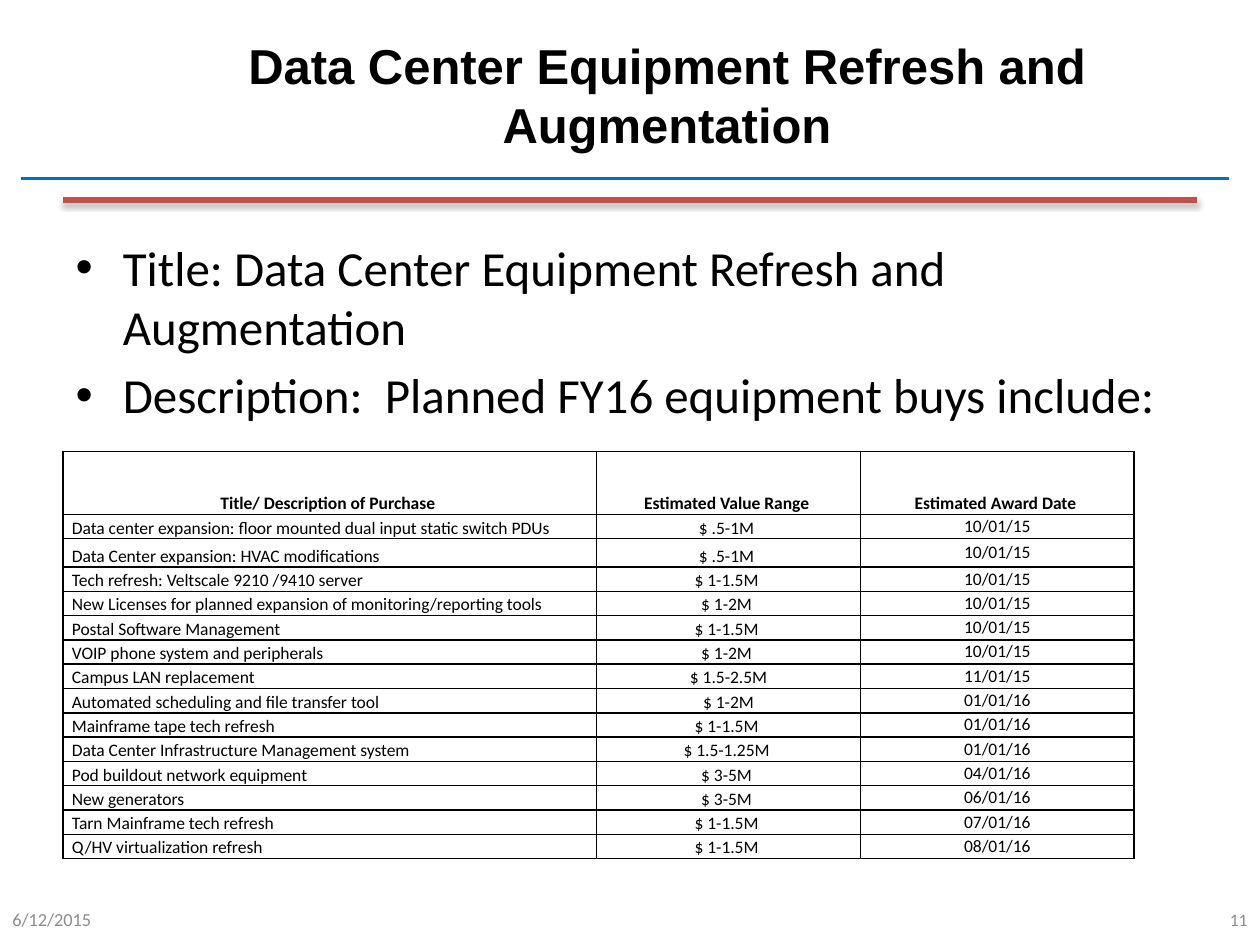
import dataclasses

import lxml.etree
import pptx
import pptx.dml.color
import pptx.enum.shapes
import pptx.enum.text
import pptx.oxml
import pptx.oxml.ns
import pptx.util

Cm = pptx.util.Cm
Pt = pptx.util.Pt
ALIGN = pptx.enum.text.PP_ALIGN
ANCHOR = pptx.enum.text.MSO_ANCHOR
qn = pptx.oxml.ns.qn


def rgb(value):
    return pptx.dml.color.RGBColor.from_string(value)


@dataclasses.dataclass
class Theme:
    ink: str = "000000"
    muted: str = "8C8C8C"
    blue: str = "0070C0"
    red: str = "C0504D"
    heading_font: str = "Arial"
    body_font: str = "Calibri"
    large: float = 28
    date: float = 10.5
    small: float = 10


class SlideBuilder:
    def __init__(self, prs, theme):
        self.theme = theme
        self.slide = prs.slides.add_slide(prs.slide_layouts[1])

    def add_text(self, p, text, align=ALIGN.LEFT, **formats):
        p.alignment = align
        r = p.add_run()
        r.text = text
        values = {"name": self.theme.body_font, "size": self.theme.small,
                  "color": self.theme.ink, "bold": False} | formats
        r.font.color.rgb = rgb(values.pop("color"))
        values["size"] = Pt(values["size"])
        for name, value in values.items():
            setattr(r.font, name, value)

    def frame(self, sp, box, anchor):
        for name, value in zip(("left", "top", "width", "height"), box):
            setattr(sp, name, Cm(value))
        tf = sp.text_frame
        tf.word_wrap = True
        tf.auto_size = pptx.enum.text.MSO_AUTO_SIZE.NONE
        tf.vertical_anchor = anchor
        return tf

    def title(self, text, box):
        tf = self.frame(self.slide.shapes.title, box, ANCHOR.MIDDLE)
        self.add_text(tf.paragraphs[0], text, ALIGN.CENTER, bold=True,
                      name=self.theme.heading_font, size=self.theme.large)

    def bullets(self, items, box):
        tf = self.frame(self.slide.placeholders[1], box, ANCHOR.TOP)
        for i, item in enumerate(items):
            p = tf.add_paragraph() if i else tf.paragraphs[0]
            p.space_before = Pt(0.2 * self.theme.large if i else 0)
            self.add_text(p, item, size=self.theme.large)

    def footer(self, text, box, align, size):
        sp = self.slide.shapes.add_textbox(0, 0, 0, 0)
        tf = self.frame(sp, box, ANCHOR.MIDDLE)
        self.add_text(tf.paragraphs[0], text, align,
                      size=size, color=self.theme.muted)

    def rule(self, x1, x2, y, color, width, shadow=False):
        sp = self.slide.shapes.add_connector(
            pptx.enum.shapes.MSO_CONNECTOR.STRAIGHT,
            Cm(x1), Cm(y), Cm(x2), Cm(y))
        sp.line.color.rgb = rgb(color)
        sp.line.width = Pt(width)
        effects = lxml.etree.SubElement(sp._element.spPr, qn("a:effectLst"))
        if shadow:
            outer = lxml.etree.SubElement(
                effects, qn("a:outerShdw"), blurRad=str(Pt(3.1)),
                dist=str(Pt(1.8)), dir="5400000", rotWithShape="0")
            tint = lxml.etree.SubElement(
                outer, qn("a:srgbClr"), val=self.theme.ink)
            lxml.etree.SubElement(tint, qn("a:alpha"), val="35000")

    def borders(self, cell):
        tc_pr = cell._tc.get_or_add_tcPr()
        for i, side in enumerate(("lnL", "lnR", "lnT", "lnB")):
            ln = pptx.oxml.parse_xml(
                f'<a:{side} {pptx.oxml.ns.nsdecls("a")} w="{Pt(1)}">'
                f'<a:solidFill><a:srgbClr val="{self.theme.ink}"/>'
                f'</a:solidFill></a:{side}>')
            tc_pr.insert(i, ln)

    def table(self, rows, left, top, widths, heights):
        table = self.slide.shapes.add_table(
            len(rows), len(widths), Cm(left), Cm(top),
            Cm(sum(widths)), Cm(sum(heights))).table
        table.first_row = table.horz_banding = False
        for column, width in zip(table.columns, widths):
            column.width = Cm(width)
        for i, (row, height) in enumerate(zip(rows, heights)):
            table.rows[i].height = Cm(height)
            for j, text in enumerate(row):
                cell = table.cell(i, j)
                cell.fill.background()
                cell.margin_left = cell.margin_right = Cm(0.18)
                cell.margin_top = cell.margin_bottom = 0
                cell.vertical_anchor = (
                    ANCHOR.MIDDLE if i and j == 2 else ANCHOR.BOTTOM)
                self.add_text(cell.text_frame.paragraphs[0], text,
                              ALIGN.LEFT if i and j == 0 else ALIGN.CENTER,
                              bold=i == 0)
                self.borders(cell)


HEADER = ("Title/ Description of Purchase ", "Estimated Value Range ",
          "Estimated Award Date ")
PURCHASES = [
    ("Data center expansion: floor mounted dual input static switch PDUs",
     "$ .5-1M ", "10/01/15"),
    ("Data Center expansion: HVAC modifications", "$ .5-1M ", "10/01/15"),
    ("Tech refresh: Veltscale 9210 /9410 server", "$ 1-1.5M ", "10/01/15"),
    ("New Licenses for planned expansion of monitoring/reporting tools",
     "$ 1-2M ", "10/01/15"),
    ("Postal Software Management", "$ 1-1.5M ", "10/01/15"),
    ("VOIP phone system and peripherals", "$ 1-2M ", "10/01/15"),
    ("Campus LAN replacement", "$ 1.5-2.5M", "11/01/15"),
    ("Automated scheduling and file transfer tool", "$ 1-2M", "01/01/16"),
    ("Mainframe tape tech refresh", "$ 1-1.5M ", "01/01/16"),
    ("Data Center Infrastructure Management system",
     "$ 1.5-1.25M ", "01/01/16"),
    ("Pod buildout network equipment", "$ 3-5M ", "04/01/16"),
    ("New generators", "$ 3-5M ", "06/01/16"),
    ("Tarn Mainframe tech refresh", "$ 1-1.5M ", "07/01/16"),
    ("Q/HV virtualization refresh", "$ 1-1.5M ", "08/01/16"),
]


def main():
    prs = pptx.Presentation()
    prs.slide_width, prs.slide_height = Cm(25.4), Cm(19.05)
    theme = Theme()
    s = SlideBuilder(prs, theme)

    # Title and the two rules below it
    s.title("Data Center Equipment Refresh and Augmentation",
            (3.39, 0.42, 20.11, 2.96))
    s.rule(0.42, 24.77, 3.6, theme.blue, 2)
    s.rule(1.27, 24.13, 4.03, theme.red, 3, shadow=True)

    # Introduction
    s.bullets(["Title: Data Center Equipment Refresh and Augmentation",
               "Description:  Planned FY16 equipment buys include:"],
              (1.27, 4.66, 23.5, 12.7))

    # Planned purchases
    heights = [1.27, 0.49, 0.57] + [0.49] * (len(PURCHASES) - 2)
    s.table([HEADER] + PURCHASES, 1.27, 9.1, (10.75, 5.33, 5.51), heights)

    # Date and page number
    s.footer("6/12/2015", (0, 18.03, 5.93, 1.01), ALIGN.LEFT, theme.date)
    s.footer("11", (19.47, 18.03, 5.93, 1.01), ALIGN.RIGHT, theme.small)

    prs.save("out.pptx")


if __name__ == "__main__":
    main()
